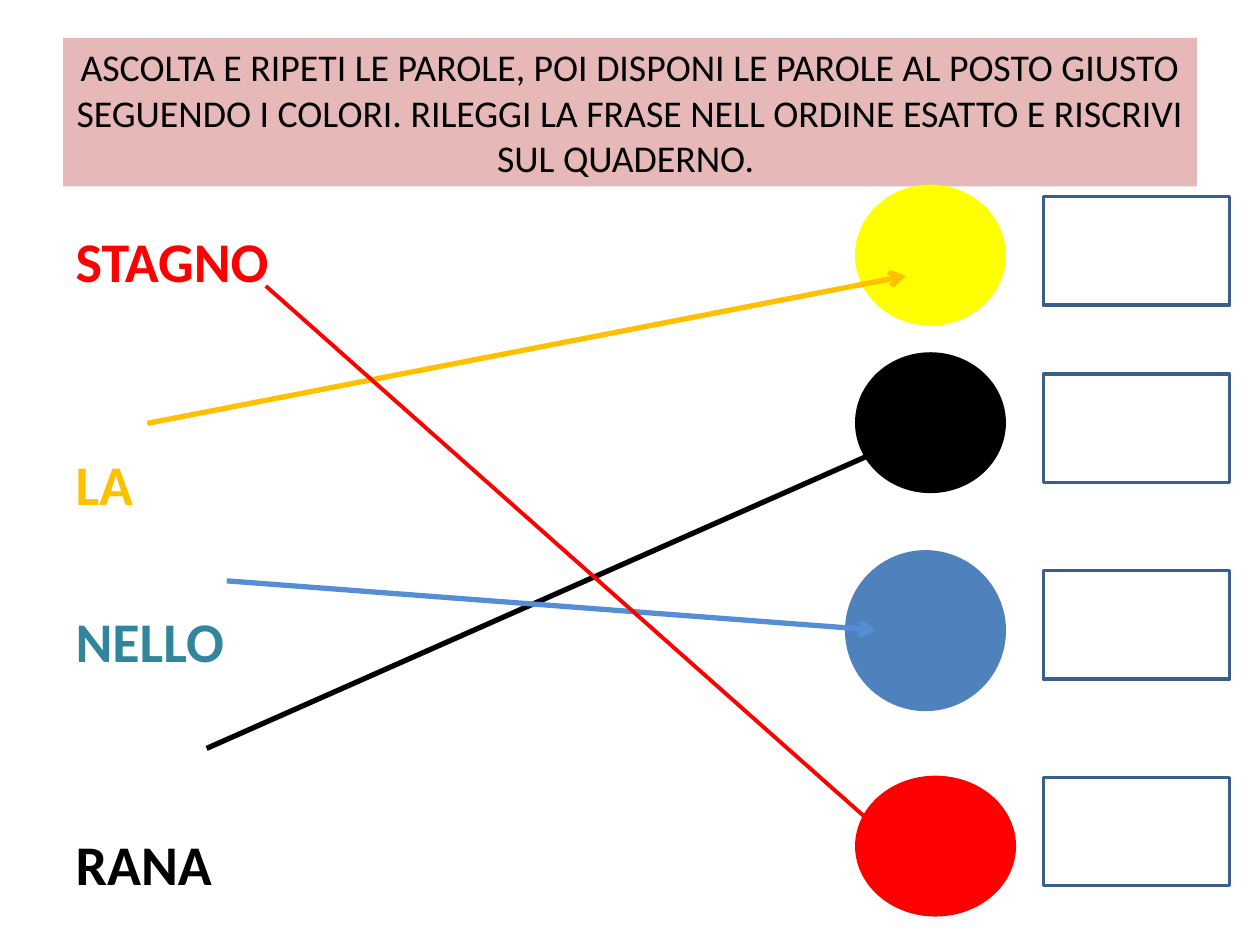
"""Build a word-ordering exercise slide with colour-coded arrows and answer boxes."""
from dataclasses import dataclass

from lxml import etree
from pptx import Presentation
from pptx.dml.color import RGBColor
from pptx.enum.shapes import MSO_CONNECTOR, MSO_SHAPE
from pptx.enum.text import MSO_ANCHOR, MSO_AUTO_SIZE, PP_ALIGN
from pptx.oxml.ns import qn
from pptx.util import Inches, Pt

STRAIGHT = MSO_CONNECTOR.STRAIGHT
OVAL, RECTANGLE = MSO_SHAPE.OVAL, MSO_SHAPE.RECTANGLE
MIDDLE, TOP = MSO_ANCHOR.MIDDLE, MSO_ANCHOR.TOP
CENTER, LEFT = PP_ALIGN.CENTER, PP_ALIGN.LEFT
NO_AUTOFIT = MSO_AUTO_SIZE.NONE


@dataclass(frozen=True)
class Theme:
    """Colours, font and sizes of the slide."""
    font: str = "Calibri"
    title_size: float = 21.6
    word_size: float = 32
    outline: float = 2
    banner: str = "E6B9B8"
    black: str = "000000"
    white: str = "FFFFFF"
    red: str = "FF0000"
    amber: str = "FFC000"
    yellow: str = "FFFF00"
    teal: str = "31859C"
    blue: str = "4F81BD"
    light_blue: str = "558ED5"
    box_border: str = "3A5F8C"


THEME = Theme()
INSTRUCTIONS = (
    "ASCOLTA E RIPETI LE PAROLE, POI DISPONI LE PAROLE AL POSTO GIUSTO "
    "SEGUENDO I COLORI. RILEGGI LA FRASE NELL ORDINE ESATTO E RISCRIVI "
    "SUL QUADERNO. "
)
WORDS = [
    ("STAGNO", THEME.red, 0),
    ("LA", THEME.amber, 89),
    ("NELLO", THEME.teal, 51),
    ("RANA", THEME.black, 89),
]
CIRCLES = [
    (6.8, 1.48, 1.17, 1.09, THEME.yellow),
    (6.8, 2.81, 1.17, 1.09, THEME.black),
    (6.72, 4.38, 1.25, 1.25, THEME.blue),
    (6.8, 6.17, 1.25, 1.09, THEME.red),
]
ARROWS = [
    ((1.17, 3.36), (7.19, 2.19), THEME.amber, 3),
    ((1.64, 5.94), (7.11, 3.52), THEME.black, 3),
    ((1.8, 4.61), (6.95, 5), THEME.light_blue, 3),
    ((2.11, 2.27), (6.95, 6.56), THEME.red, 2.25),
]
ANSWER_LEFT, ANSWER_WIDTH, ANSWER_HEIGHT = 8.28, 1.48, 0.86
ANSWER_TOPS = [1.56, 2.97, 4.53, 6.17]


def place(placeholder, left, top, width, height, anchor):
    """Move a placeholder and return its text frame."""
    placeholder.left, placeholder.top = Inches(left), Inches(top)
    placeholder.width, placeholder.height = Inches(width), Inches(height)
    frame = placeholder.text_frame
    frame.auto_size, frame.word_wrap = NO_AUTOFIT, True
    frame.vertical_anchor = anchor
    return frame


def style_text(paragraph, size, color, align, bold=False):
    """Format a whole paragraph."""
    paragraph.alignment = align
    font = paragraph.font
    font.name, font.size, font.bold = THEME.font, Pt(size), bold
    font.color.rgb = RGBColor.from_string(color)


def fill_title(title):
    """Write the instructions on the banner."""
    frame = place(title, 0.5, 0.3, 9, 1.18, MIDDLE)
    title.fill.solid()
    title.fill.fore_color.rgb = RGBColor.from_string(THEME.banner)
    frame.text = INSTRUCTIONS
    style_text(frame.paragraphs[0], THEME.title_size, THEME.black, CENTER)


def fill_words(body):
    """List the words to reorder, each in its colour."""
    frame = place(body, 0.5, 1.75, 1.77, 5.52, TOP)
    frame.text = "\n".join(word for word, _, _ in WORDS)
    for paragraph, (_, color, gap) in zip(frame.paragraphs, WORDS):
        paragraph.space_before = Pt(gap)
        etree.SubElement(paragraph._p.get_or_add_pPr(), qn("a:buNone"))
        style_text(paragraph, THEME.word_size, color, LEFT, bold=True)


def add_outlined(slide, preset, left, top, width, height, fill, border):
    """Add a filled preset shape with a border."""
    shape = slide.shapes.add_shape(
        preset, Inches(left), Inches(top), Inches(width), Inches(height))
    shape.shadow.inherit = False
    shape.fill.solid()
    shape.fill.fore_color.rgb = RGBColor.from_string(fill)
    shape.line.color.rgb = RGBColor.from_string(border)
    shape.line.width = Pt(THEME.outline)


def add_arrow(slide, start, end, color, width):
    """Add a straight arrow from a word to its circle."""
    arrow = slide.shapes.add_connector(
        STRAIGHT, *(Inches(value) for value in (*start, *end)))
    arrow.line.color.rgb = RGBColor.from_string(color)
    arrow.line.width = Pt(width)
    etree.SubElement(arrow.line._get_or_add_ln(), qn("a:tailEnd"), type="arrow")
    etree.SubElement(arrow._element.spPr, qn("a:effectLst"))


def main():
    """Assemble and save the slide."""
    deck = Presentation()
    deck.slide_width, deck.slide_height = Inches(10), Inches(7.5)
    slide = deck.slides.add_slide(deck.slide_layouts[1])
    fill_title(slide.shapes.title)
    fill_words(slide.placeholders[1])
    for *frame, color in CIRCLES:
        add_outlined(slide, OVAL, *frame, color, color)
    for arrow in ARROWS:
        add_arrow(slide, *arrow)
    for top in ANSWER_TOPS:
        add_outlined(slide, RECTANGLE, ANSWER_LEFT, top, ANSWER_WIDTH,
                     ANSWER_HEIGHT, THEME.white, THEME.box_border)
    deck.save("out.pptx")


if __name__ == "__main__":
    main()
